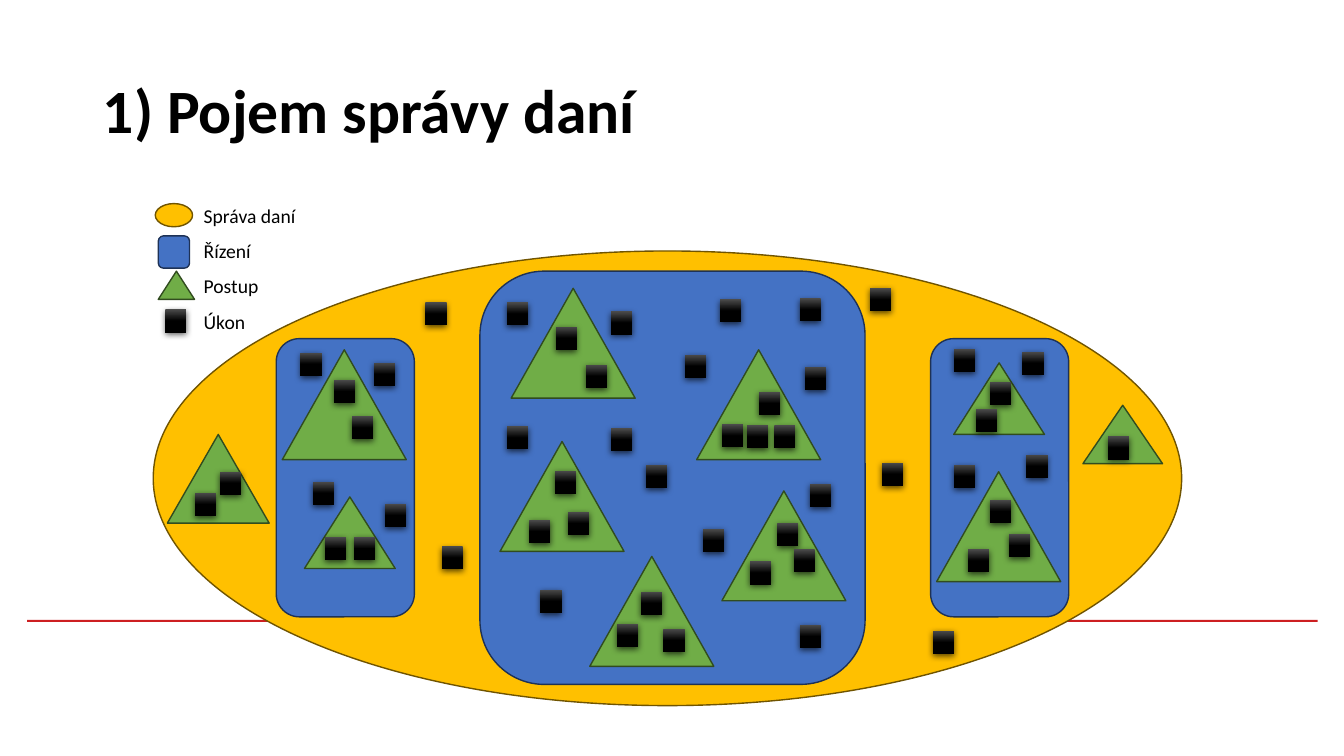
import pptx
import pptx.util
import pptx.dml.color
import pptx.enum.shapes
import pptx.enum.text
import lxml.etree

Inches, Pt = pptx.util.Inches, pptx.util.Pt
SHAPE = pptx.enum.shapes.MSO_SHAPE
ANCHOR = pptx.enum.text.MSO_ANCHOR
ALIGN = pptx.enum.text.PP_ALIGN

# Content
TITLE = "1) Pojem správy daní"
LEGEND = ["Správa daní", "Řízení", "Postup", "Úkon"]

COLOURS = {
    "text": "000000", "rule": "CD1F21",
    "administration": "FFC000", "administration edge": "705400",
    "proceeding": "4472C4", "proceeding edge": "1E3256",
    "procedure": "70AD47", "procedure edge": "314C1F",
    "act top": "4B4B4B", "act": "000000",
}
KINDS = {
    "administration": SHAPE.OVAL,
    "proceeding": SHAPE.ROUNDED_RECTANGLE,
    "procedure": SHAPE.ISOSCELES_TRIANGLE,
}

# Left, top, width, height in inches
ADMINISTRATION = [(1.52, 2.49, 10.2, 4.51)]
PROCEEDINGS = [(2.74, 3.36, 1.37, 2.76), (9.23, 3.36, 1.37, 2.76), (4.76, 2.69, 3.82, 4.1)]

# Procedures: size, then the left and top of each
PROCEDURES = {
    (1.23, 1.09): [(5.07, 2.86), (6.91, 3.47), (4.96, 4.38), (7.16, 4.87),
                   (5.85, 5.52), (2.8, 3.47), (9.29, 4.68)],
    (0.9, 0.71): [(3.02, 4.93), (9.46, 3.6)],
    (1.01, 0.88): [(1.66, 4.31)],
    (0.79, 0.58): [(10.74, 4.02)],
}

# Acts: left and top of each, by the area that holds them
ACT_SIZE = (0.21, 0.23)
ACTS = {
    "outside proceedings": [
        (4.22, 3), (4.38, 5.42), (8.63, 2.86), (8.75, 4.59), (9.25, 6.26),
        (2.18, 4.68), (1.93, 4.89), (10.99, 4.33)],
    "left proceeding": [
        (2.98, 3.5), (3.71, 3.6), (3.31, 3.77), (3.49, 4.13),
        (3.1, 4.78), (3.82, 5), (3.22, 5.33), (3.51, 5.33)],
    "middle proceeding": [
        (5.03, 3), (5.51, 3.24), (5.81, 3.62), (6.06, 3.09),
        (7.14, 2.97), (7.93, 2.96), (6.79, 3.52), (7.98, 3.64),
        (7.53, 3.89), (7.16, 4.21), (7.41, 4.22), (7.68, 4.22),
        (5.03, 4.23), (6.06, 4.25), (5.5, 4.67), (5.25, 5.16), (5.63, 5.08),
        (6.41, 4.61), (8.03, 4.8), (7.71, 5.19), (7.87, 5.45), (7.44, 5.57),
        (6.97, 5.25), (5.36, 5.85), (6.36, 5.87), (6.12, 6.19), (6.58, 6.24),
        (7.93, 6.2)],
    "right proceeding": [
        (9.46, 3.46), (10.14, 3.49), (9.82, 3.79), (9.68, 4.06),
        (9.46, 4.61), (10.18, 4.51), (9.82, 4.96), (9.6, 5.45), (10.01, 5.3)],
    "legend": [(1.64, 3.07)],
}
LEGEND_MARKS = {
    "procedure": (1.57, 2.69, 0.36, 0.28),
    "proceeding": (1.57, 2.34, 0.31, 0.32),
    "administration": (1.54, 2.02, 0.37, 0.23),
}

TITLE_FONT = {"name": "Calibri", "size": Pt(44), "bold": True}
LEGEND_FONT = {"name": "Calibri", "size": Pt(14)}
LEGEND_SPACING = {"line_spacing": 0.9, "alignment": ALIGN.LEFT}


def colour(name):
    return pptx.dml.color.RGBColor.from_string(COLOURS[name])


def apply(target, values):
    for key, value in values.items():
        setattr(target, key, value)


def write(paragraph, text, font):
    paragraph.text = text
    apply(paragraph.font, font)
    paragraph.font.color.rgb = colour("text")


def add_plain(slide, preset, box):
    shape = slide.shapes.add_shape(preset, *map(Inches, box))
    shape.shadow.inherit = False
    return shape


def add_area(slide, kind, box):
    area = add_plain(slide, KINDS[kind], box)
    area.fill.solid()
    area.fill.fore_color.rgb = colour(kind)
    area.line.color.rgb = colour(kind + " edge")
    area.line.width = Pt(1)


def add_act(slide, corner):
    act = add_plain(slide, SHAPE.RECTANGLE, corner + ACT_SIZE)
    act.line.fill.background()
    act.fill.gradient()
    act.fill.gradient_angle = 270
    for stop, position, name in zip(act.fill.gradient_stops, (0, 0.5), ("act top", "act")):
        stop.position = position
        stop.color.rgb = colour(name)
    # Soft shadow straight below
    qn = pptx.oxml.ns.qn
    effects = act.element.spPr.find(qn("a:effectLst"))
    shadow = lxml.etree.SubElement(effects, qn("a:outerShdw"), {
        "blurRad": str(Pt(4.5)), "dist": str(Pt(1.5)), "dir": "5400000",
        "algn": "ctr", "rotWithShape": "0"})
    tint = lxml.etree.SubElement(shadow, qn("a:srgbClr"), val=COLOURS["act"])
    lxml.etree.SubElement(tint, qn("a:alpha"), val="63000")


def main():
    deck = pptx.Presentation()
    deck.slide_width, deck.slide_height = Inches(13.33), Inches(7.5)
    slide = deck.slides.add_slide(deck.slide_layouts[5])

    # Red rule
    rule = add_plain(slide, SHAPE.RECTANGLE, (0.27, 6.15, 12.8, 0.02))
    rule.fill.solid()
    rule.fill.fore_color.rgb = colour("rule")
    rule.line.fill.background()

    # Title
    title = slide.shapes.title
    apply(title, {"left": Inches(0.92), "top": Inches(0.4),
                  "width": Inches(11.5), "height": Inches(1.45)})
    apply(title.text_frame, {"vertical_anchor": ANCHOR.MIDDLE, "word_wrap": True,
                             "auto_size": pptx.enum.text.MSO_AUTO_SIZE.NONE})
    heading = title.text_frame.paragraphs[0]
    write(heading, TITLE, TITLE_FONT)
    apply(heading, {"alignment": ALIGN.LEFT, "line_spacing": 0.9})

    # Legend labels, set in to clear the marks
    labels = slide.shapes.add_textbox(*map(Inches, (0.92, 2, 11.5, 4.04))).text_frame
    apply(labels, {"word_wrap": True, "margin_left": Inches(1.1)})
    for index, label in enumerate(LEGEND):
        line = labels.add_paragraph() if index else labels.paragraphs[0]
        write(line, label, LEGEND_FONT)
        apply(line, LEGEND_SPACING)
        if index:
            line.space_before = Pt(10)

    # Nested areas, from the outermost in
    procedures = [corner + size for size, corners in PROCEDURES.items() for corner in corners]
    layers = {"administration": ADMINISTRATION, "proceeding": PROCEEDINGS,
              "procedure": procedures}
    for kind, boxes in layers.items():
        for box in boxes:
            add_area(slide, kind, box)
    for kind, box in LEGEND_MARKS.items():
        add_area(slide, kind, box)

    # Acts
    for corners in ACTS.values():
        for corner in corners:
            add_act(slide, corner)

    deck.save("out.pptx")


if __name__ == "__main__":
    main()
